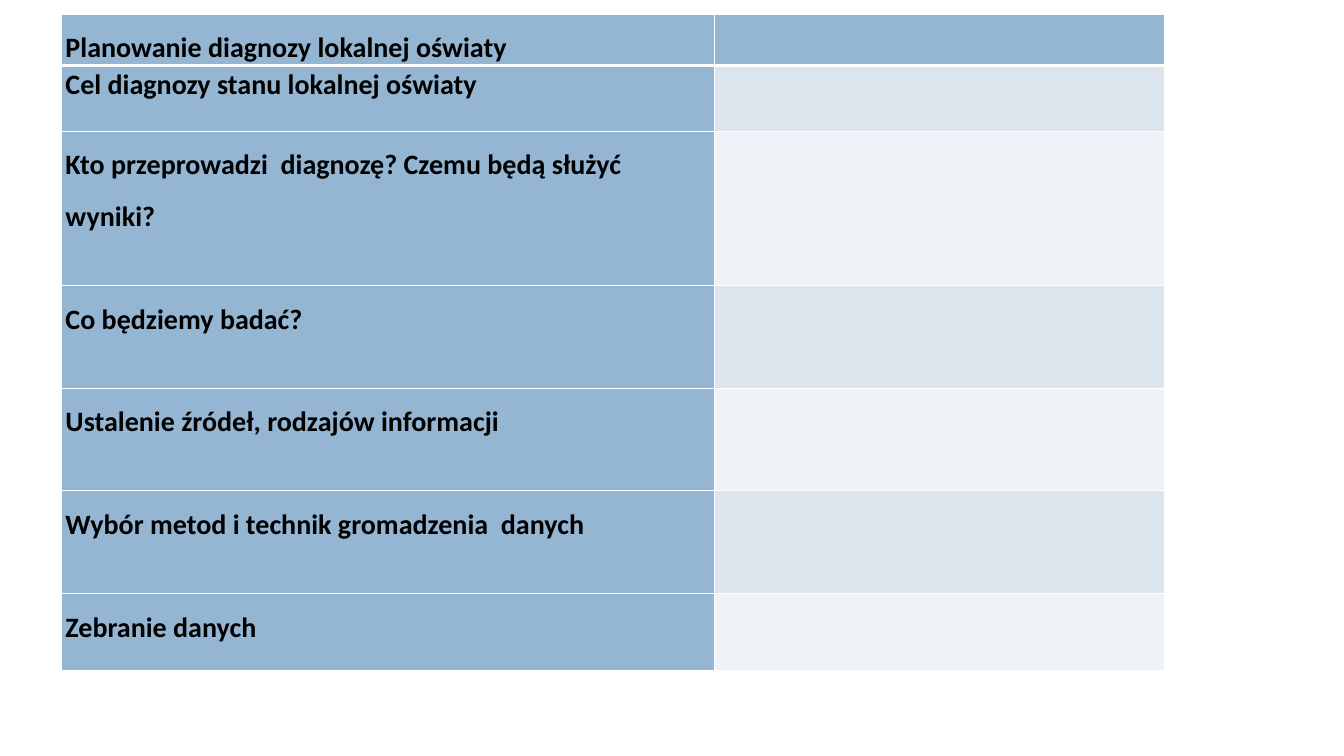
from lxml import etree
from pptx import Presentation
from pptx.dml.color import RGBColor
from pptx.oxml.ns import qn
from pptx.util import Inches, Pt

BLACK = RGBColor(0x00, 0x00, 0x00)
WHITE = RGBColor(0xFF, 0xFF, 0xFF)
BLUE = RGBColor(0x94, 0xB6, 0xD2)
BAND_DARK = RGBColor(0xDC, 0xE5, 0xEE)
BAND_LIGHT = RGBColor(0xEE, 0xF3, 0xF7)

COLUMN_WIDTHS = (6.48, 4.46)
# Question, row height, line spacing
ROWS = (
    ("Planowanie diagnozy lokalnej oświaty", 0.51, 1.5),
    ("Cel diagnozy stanu lokalnej oświaty", 0.65, 1.07),
    ("Kto przeprowadzi  diagnozę? Czemu będą służyć wyniki?", 1.53, 1.5),
    ("Co będziemy badać?", 1.02, 1.5),
    ("Ustalenie źródeł, rodzajów informacji", 1.02, 1.5),
    ("Wybór metod i technik gromadzenia  danych", 1.02, 1.5),
    ("Zebranie danych", 0.76, 1.5),
)


def add_text(tf, text, *, size=20, color=BLACK, bold=True, font="Calibri", spacing=1.5):
    tf.word_wrap = True
    p = tf.paragraphs[0]
    p.line_spacing = spacing
    r = p.add_run()
    r.text = text
    r.font.size = Pt(size)
    r.font.name = font
    r.font.bold = bold
    r.font.color.rgb = color


def set_borders(cell, **widths):
    """Draw white borders; widths in points by side: L, R, T, B."""
    tc_pr = cell._tc.get_or_add_tcPr()
    for position, side in enumerate("LRTB"):
        ln = etree.Element(qn("a:ln" + side), w=str(Pt(widths.get(side, 1))))
        fill = etree.SubElement(ln, qn("a:solidFill"))
        etree.SubElement(fill, qn("a:srgbClr"), val=str(WHITE))
        tc_pr.insert(position, ln)


def format_cell(cell, fill, **widths):
    cell.margin_left = cell.margin_right = Inches(0.04)
    cell.margin_top = cell.margin_bottom = 0
    cell.fill.solid()
    cell.fill.fore_color.rgb = fill
    set_borders(cell, **widths)


def answer_fill(index):
    if index == 0:
        return BLUE
    return BAND_DARK if index % 2 else BAND_LIGHT


def add_plan_table(slide):
    height = sum(row[1] for row in ROWS)
    table = slide.shapes.add_table(
        len(ROWS), len(COLUMN_WIDTHS), Inches(0.61), Inches(0.14),
        Inches(sum(COLUMN_WIDTHS)), Inches(height)).table
    table.first_row = table.horz_banding = False
    for column, width in zip(table.columns, COLUMN_WIDTHS):
        column.width = Inches(width)
    header_rule = {0: {"B": 3}, 1: {"T": 3}}
    for i, (question, row_height, spacing) in enumerate(ROWS):
        table.rows[i].height = Inches(row_height)
        widths = header_rule.get(i, {})
        format_cell(table.cell(i, 0), BLUE, **widths)
        format_cell(table.cell(i, 1), answer_fill(i), **widths)
        add_text(table.cell(i, 0).text_frame, question, spacing=spacing)


def main():
    prs = Presentation()
    prs.slide_width = Inches(13.33)
    prs.slide_height = Inches(7.5)
    slide = prs.slides.add_slide(prs.slide_layouts[6])
    add_plan_table(slide)
    prs.save("out.pptx")


if __name__ == "__main__":
    main()
